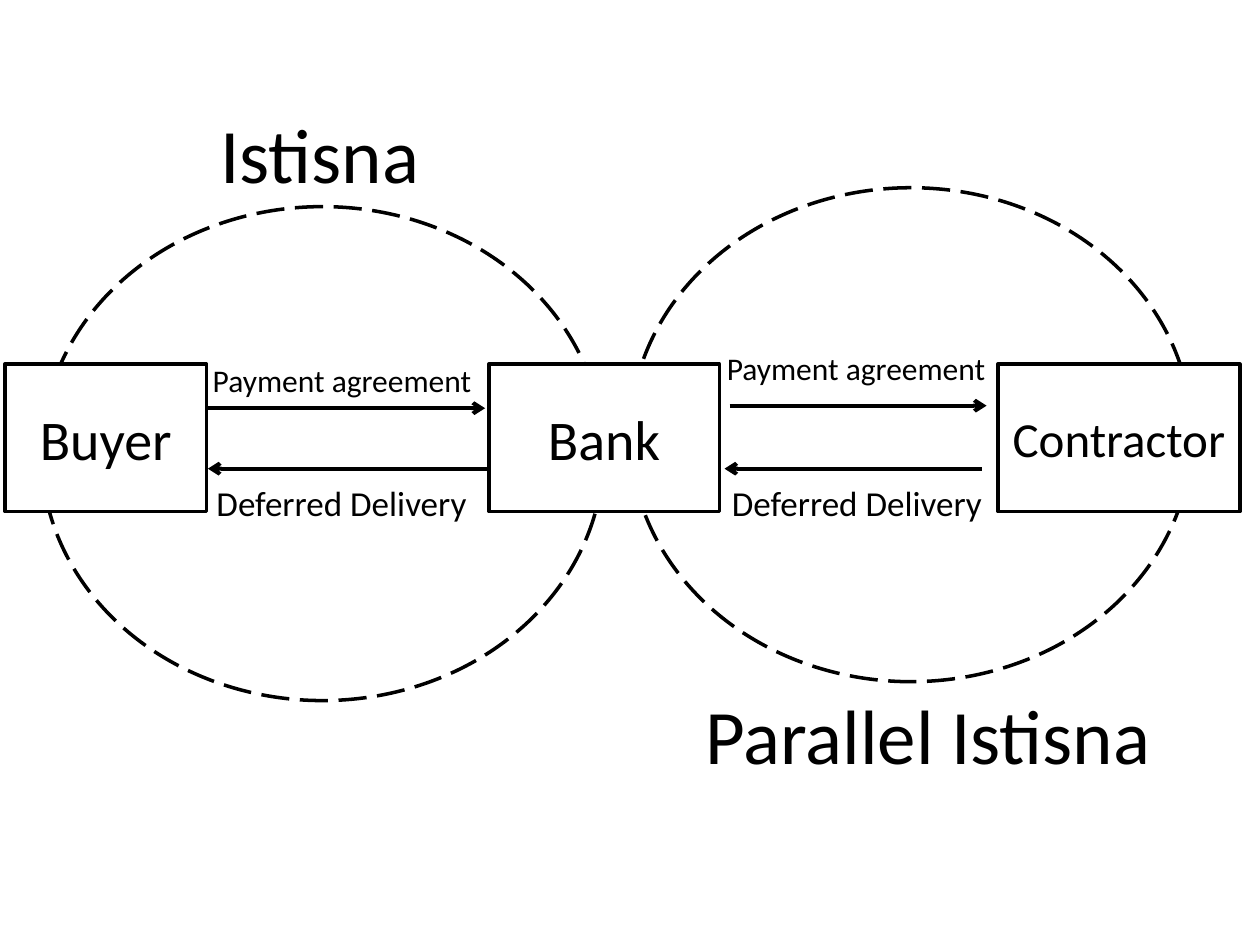
"""Build the Istisna and parallel Istisna diagram slide."""
from lxml.etree import SubElement
from pptx import Presentation
from pptx.dml.color import RGBColor
from pptx.enum.dml import MSO_LINE
from pptx.enum.shapes import MSO_CONNECTOR, MSO_SHAPE
from pptx.enum.text import MSO_ANCHOR, MSO_AUTO_SIZE, PP_ALIGN
from pptx.oxml.ns import qn
from pptx.util import Inches, Pt

BLACK = RGBColor(0, 0, 0)
WHITE = RGBColor(255, 255, 255)


def write(tf, text, size=20, align=PP_ALIGN.LEFT, anchor=MSO_ANCHOR.TOP):
    tf.word_wrap = True
    tf.vertical_anchor = anchor
    p = tf.paragraphs[0]
    p.alignment = align
    r = p.add_run()
    r.text = text
    r.font.name = "Calibri"
    r.font.size = Pt(size)
    r.font.color.rgb = BLACK


def add_outline(s, kind, x, y, w, h):
    sp = s.shapes.add_shape(kind, Inches(x), Inches(y), Inches(w), Inches(h))
    sp.shadow.inherit = False
    sp.fill.solid()
    sp.fill.fore_color.rgb = WHITE
    sp.line.color.rgb = BLACK
    sp.line.width = Pt(2)
    return sp


prs = Presentation()
prs.slide_width, prs.slide_height = Inches(10), Inches(7.5)
s = prs.slides.add_slide(prs.slide_layouts[6])

for x, y in [(5, 1.49), (0.33, 1.64)]:
    sp = add_outline(s, MSO_SHAPE.OVAL, x, y, 4.46, 3.92)
    sp.line.dash_style = MSO_LINE.LONG_DASH

for text, x, w, size in [
    ("Buyer", 0.04, 1.6, 32),
    ("Bank", 3.88, 1.83, 32),
    ("Contractor", 7.92, 1.92, 28),
]:
    sp = add_outline(s, MSO_SHAPE.RECTANGLE, x, 2.89, w, 1.17)
    write(sp.text_frame, text, size=size, align=PP_ALIGN.CENTER,
          anchor=MSO_ANCHOR.MIDDLE)

for x1, x2, y in [
    (1.65, 3.85, 3.24),
    (5.79, 7.83, 3.22),
    (7.79, 5.75, 3.72),
    (3.88, 1.65, 3.72),
]:
    arrow = s.shapes.add_connector(
        MSO_CONNECTOR.STRAIGHT, Inches(x1), Inches(y), Inches(x2), Inches(y))
    arrow.line.color.rgb = BLACK
    arrow.line.width = Pt(2.25)
    SubElement(arrow.line._get_or_add_ln(), qn("a:tailEnd"), type="arrow")
    SubElement(arrow._element.spPr, qn("a:effectLst"))

for text, x, y, w, h, size in [
    ("Deferred Delivery", 1.62, 3.77, 2.23, 0.44, 20),
    ("Payment agreement", 5.67, 2.72, 2.33, 0.4, 18),
    ("Deferred Delivery", 5.71, 3.77, 2.21, 0.44, 20),
    ("Istisna", 1.65, 0.8, 2.52, 0.84, 44),
    ("Parallel Istisna", 5.5, 5.41, 3.96, 0.84, 44),
    ("Payment agreement", 1.59, 2.82, 2.33, 0.4, 18),
]:
    tb = s.shapes.add_textbox(Inches(x), Inches(y), Inches(w), Inches(h))
    write(tb.text_frame, text, size=size)
    tb.text_frame.auto_size = MSO_AUTO_SIZE.SHAPE_TO_FIT_TEXT

prs.save("out.pptx")
